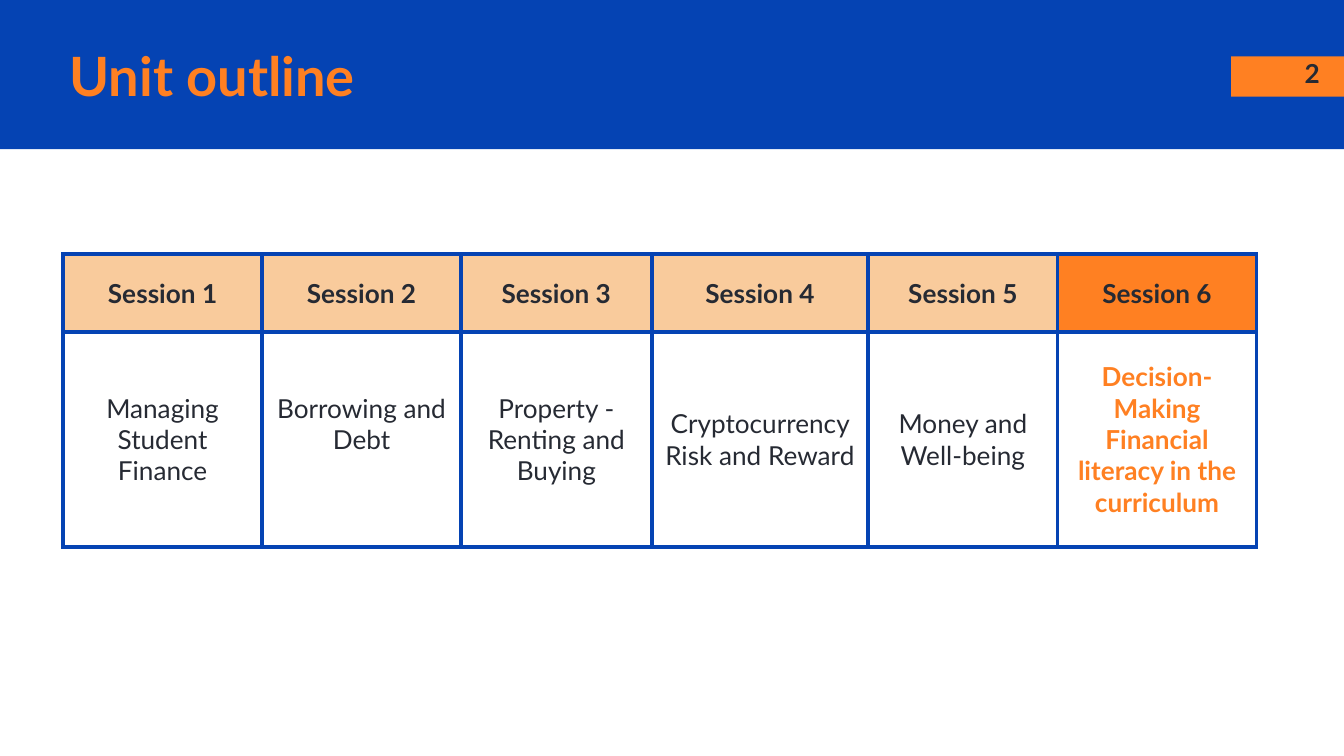
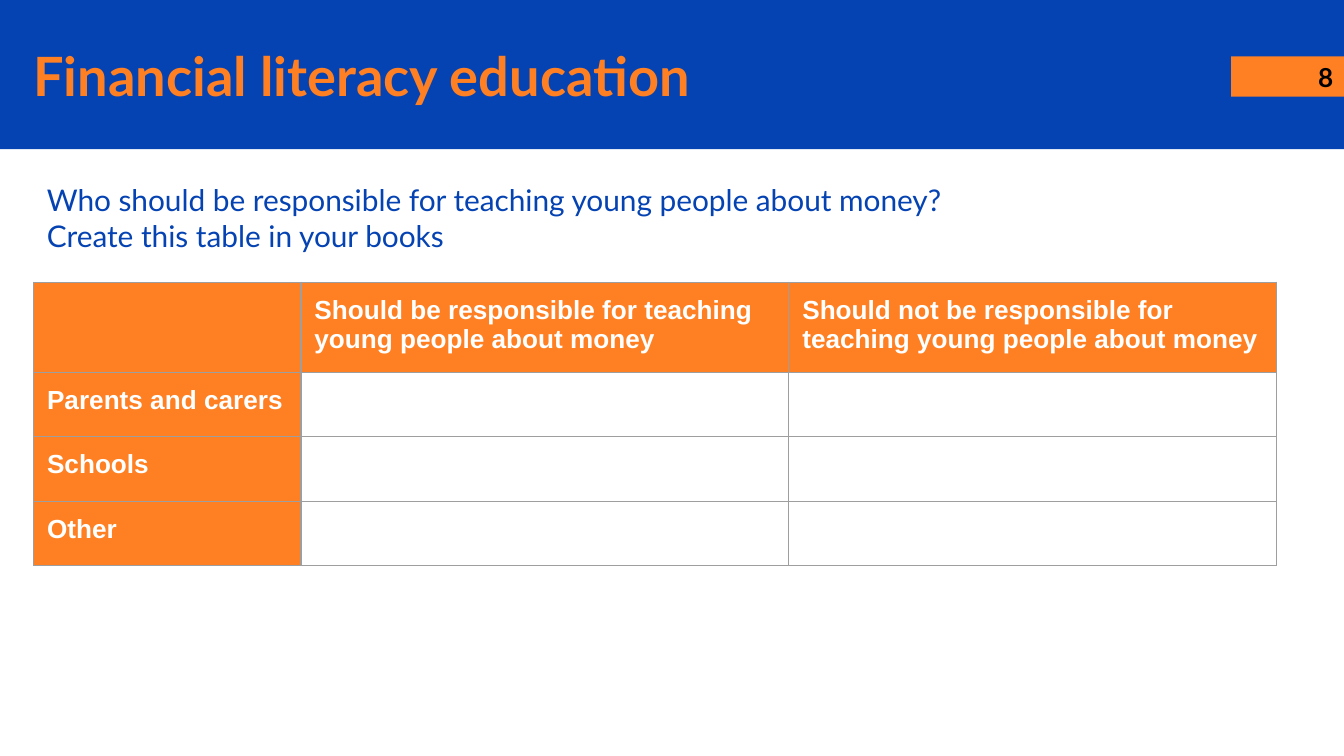
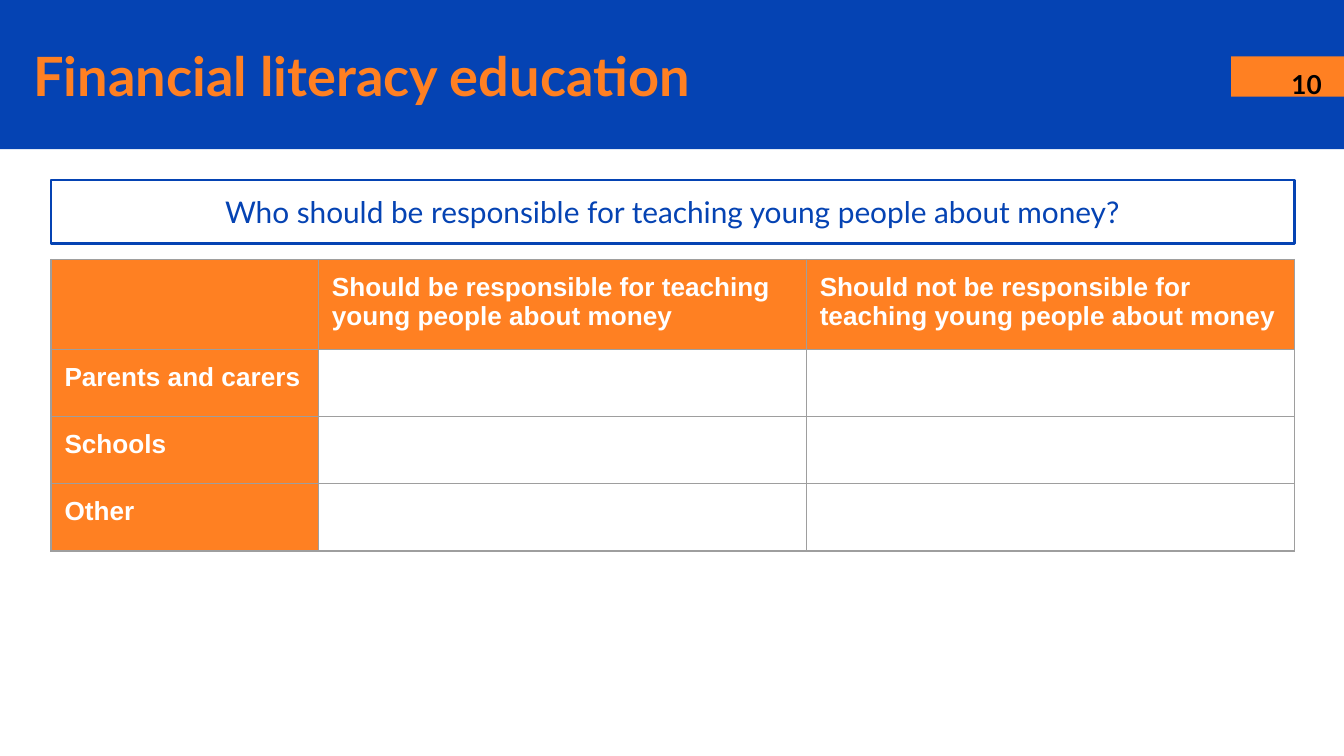
import pptx
import pptx.dml.color
import pptx.enum.shapes
import pptx.enum.text
import pptx.oxml
import pptx.oxml.ns
import pptx.util

Inches = pptx.util.Inches
Pt = pptx.util.Pt
RGBColor = pptx.dml.color.RGBColor
ALIGN = pptx.enum.text.PP_ALIGN
ANCHOR = pptx.enum.text.MSO_ANCHOR
RECTANGLE = pptx.enum.shapes.MSO_SHAPE.RECTANGLE

BLUE = RGBColor(0x05, 0x43, 0xB3)
ORANGE = RGBColor(0xFF, 0x80, 0x22)
PEACH = RGBColor(0xF9, 0xCB, 0x9C)
INK = RGBColor(0x26, 0x2A, 0x33)
GREY = RGBColor(0x9E, 0x9E, 0x9E)
BLACK = RGBColor(0, 0, 0)
WHITE = RGBColor(0xFF, 0xFF, 0xFF)
INSET = Inches(0.1)
QUESTION = "Who should be responsible for teaching young people about money?"


def write(frame, text, size, color, bold=False, align=ALIGN.LEFT, font="Lato"):
    frame.text = text
    frame.word_wrap = True
    for paragraph in frame.paragraphs:
        paragraph.alignment = align
        for run in paragraph.runs:
            run.font.name = font
            run.font.size = Pt(size)
            run.font.bold = bold
            run.font.color.rgb = color


def add_grid(slide, left, top, widths, heights, border, border_width):
    """Add a table with plain white cells and the same border on every side."""
    table = slide.shapes.add_table(
        len(heights), len(widths), Inches(left), Inches(top),
        Inches(sum(widths)), Inches(sum(heights))).table
    table.first_row = table.horz_banding = False
    for column, width in zip(table.columns, widths):
        column.width = Inches(width)
    for row, height in zip(table.rows, heights):
        row.height = Inches(height)
    for cell in table.iter_cells():
        properties = cell._tc.get_or_add_tcPr()
        for side in ("lnL", "lnR", "lnT", "lnB"):
            properties.append(pptx.oxml.parse_xml(
                f'<a:{side} {pptx.oxml.ns.nsdecls("a")} w="{Pt(border_width)}">'
                f'<a:solidFill><a:srgbClr val="{border}"/></a:solidFill></a:{side}>'))
        cell.fill.solid()
        cell.fill.fore_color.rgb = WHITE
    return table


presentation = pptx.Presentation()
presentation.slide_width = Inches(10)
presentation.slide_height = Inches(10) * 9 // 16

# Header band, title and page number of every slide
headers = [
    ("Unit outline", 0.42, 8.46, "2", (9.32, 0.33, 0.55, 0.43), INK, ALIGN.RIGHT),
    ("Financial literacy education", 0.15, 8.85, "8", (9.71, 0.36, 0.29, 0.22), BLACK, ALIGN.LEFT),
    ("Financial literacy education", 0.15, 8.85, "10", (9.51, 0.41, 0.49, 0.26), BLACK, ALIGN.LEFT),
]
for title, title_left, title_width, number, number_box, number_color, number_align in headers:
    slide = presentation.slides.add_slide(presentation.slide_layouts[6])
    for box, color in (((0, 0, 10, 1.11), BLUE), ((9.16, 0.42, 0.84, 0.3), ORANGE)):
        band = slide.shapes.add_shape(RECTANGLE, *map(Inches, box))
        band.shadow.inherit = False
        band.fill.solid()
        band.fill.fore_color.rgb = color
        band.line.fill.background()

    title_frame = slide.shapes.add_textbox(
        Inches(title_left), Inches(0.28), Inches(title_width), Inches(0.56)).text_frame
    title_frame.vertical_anchor = ANCHOR.MIDDLE
    write(title_frame, title, 29, ORANGE, True)

    number_frame = slide.shapes.add_textbox(*map(Inches, number_box)).text_frame
    number_frame.margin_top = INSET
    number_frame.margin_right = Inches(0.05)
    write(number_frame, number, 14, number_color, True, number_align)

outline_slide, task_slide, answer_slide = presentation.slides

# Unit outline: the current session is highlighted
topics = [
    "Managing Student Finance",
    "Borrowing and Debt",
    "Property - Renting and Buying",
    "Cryptocurrency Risk and Reward",
    "Money and Well-being",
    "Decision- Making\nFinancial literacy in the curriculum",
]
sessions = add_grid(outline_slide, 0.47, 1.89, [1.48, 1.48, 1.42, 1.61, 1.41, 1.48],
                    [0.58, 1.6], BLUE, 2.25)
for index, topic in enumerate(topics):
    current = index == len(topics) - 1
    heading_cell, topic_cell = sessions.cell(0, index), sessions.cell(1, index)
    heading_cell.fill.fore_color.rgb = ORANGE if current else PEACH
    write(heading_cell.text_frame, f"Session {index + 1}", 14, INK, True, ALIGN.CENTER)
    write(topic_cell.text_frame, topic, 14, ORANGE if current else INK, current, ALIGN.CENTER)
    for cell in (heading_cell, topic_cell):
        cell.vertical_anchor = ANCHOR.MIDDLE
        cell.margin_left = cell.margin_right = INSET
        cell.margin_top = cell.margin_bottom = INSET
sessions.cell(1, 1).margin_bottom = Inches(0.33)

# Responsibility table on the task and answer slides
headings = {
    (0, 0): "",
    (0, 1): "Should be responsible for teaching young people about money",
    (0, 2): "Should not be responsible for teaching young people about money",
    (1, 0): "Parents and carers",
    (2, 0): "Schools",
    (3, 0): "Other",
}
for slide, left, top, row_height in ((task_slide, 0.25, 2.1, 0.48), (answer_slide, 0.38, 1.93, 0.5)):
    responsibility = add_grid(slide, left, top, [1.99, 3.63, 3.63],
                              [0.67] + [row_height] * 3, GREY, 0.75)
    for position, heading in headings.items():
        cell = responsibility.cell(*position)
        cell.fill.fore_color.rgb = ORANGE
        cell.margin_left = cell.margin_right = INSET
        cell.margin_top = INSET
        write(cell.text_frame, heading, 14, WHITE, True, font="Arial")

task_frame = task_slide.shapes.add_textbox(
    Inches(0.25), Inches(1.25), Inches(9.25), Inches(0.74)).text_frame
task_frame.margin_top = INSET
write(task_frame, QUESTION + "\nCreate this table in your books", 16, BLUE)

question_box = answer_slide.shapes.add_shape(
    RECTANGLE, Inches(0.38), Inches(1.34), Inches(9.25), Inches(0.47))
question_box.shadow.inherit = False
question_box.fill.background()
question_box.line.color.rgb = BLUE
question_box.line.width = Pt(1.5)
question_box.text_frame.vertical_anchor = ANCHOR.MIDDLE
write(question_box.text_frame, QUESTION, 16, BLUE, align=ALIGN.CENTER)

presentation.save("out.pptx")
